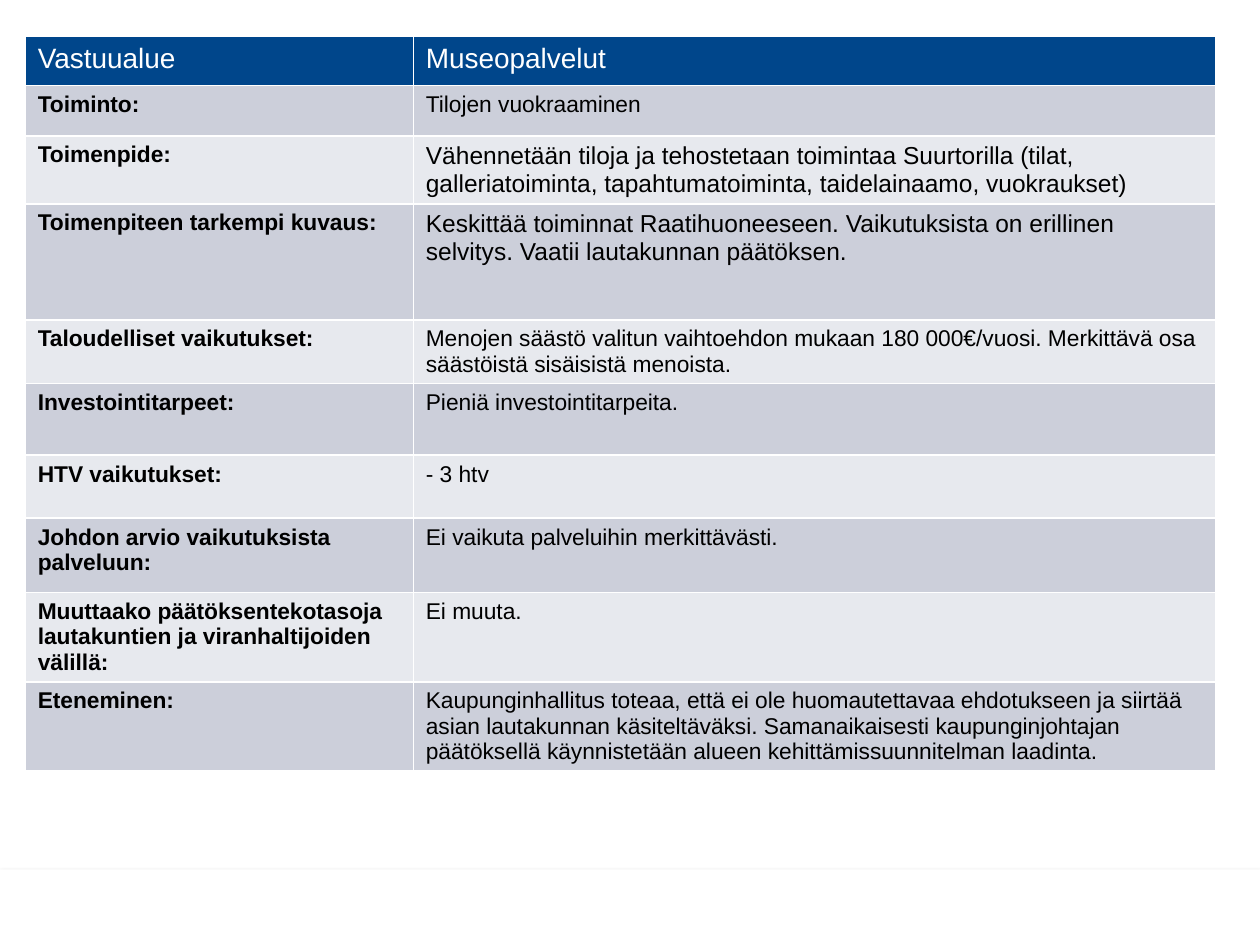
"""Build a slide with a table that sums up a proposed museum service measure."""
from lxml import etree
from pptx import Presentation
from pptx.dml.color import RGBColor
from pptx.enum.shapes import MSO_SHAPE
from pptx.oxml import parse_xml
from pptx.util import Inches, Pt

RECT = MSO_SHAPE.RECTANGLE
NS = "http://schemas.openxmlformats.org/drawingml/2006/main"
NAVY, DARK, LIGHT, WHITE, BLACK = "00468B", "CCCFDA", "E7E9EE", "FFFFFF", "000000"
COLS = [3.08, 6.37]
ROWS = [
    (0.39, "Vastuualue", "Museopalvelut", 16),
    (0.40, "Toiminto:", "Tilojen vuokraaminen", 13),
    (0.54, "Toimenpide:",
     "Vähennetään tiloja ja tehostetaan toimintaa Suurtorilla (tilat, galleriatoiminta, "
     "tapahtumatoiminta, taidelainaamo, vuokraukset)", 14),
    (0.92, "Toimenpiteen tarkempi kuvaus:",
     "Keskittää toiminnat Raatihuoneeseen. Vaikutuksista on erillinen selvitys. "
     "Vaatii lautakunnan päätöksen.", 14),
    (0.50, "Taloudelliset vaikutukset:",
     "Menojen säästö valitun vaihtoehdon mukaan 180 000€/vuosi. "
     "Merkittävä osa säästöistä sisäisistä menoista.", 13),
    (0.57, "Investointitarpeet:", "Pieniä investointitarpeita.", 13),
    (0.50, "HTV vaikutukset:", "- 3 htv", 13),
    (0.59, "Johdon arvio vaikutuksista palveluun:",
     "Ei vaikuta palveluihin merkittävästi.", 13),
    (0.71, "Muuttaako päätöksentekotasoja lautakuntien ja viranhaltijoiden välillä:",
     "Ei muuta.", 13),
    (0.70, "Eteneminen:",
     "Kaupunginhallitus toteaa, että ei ole huomautettavaa ehdotukseen ja siirtää asian "
     "lautakunnan käsiteltäväksi. Samanaikaisesti kaupunginjohtajan päätöksellä "
     "käynnistetään alueen kehittämissuunnitelman laadinta.", 13),
]


def rgb(value):
    return RGBColor.from_string(value)


def add_borders(cell):
    tcPr = cell._tc.get_or_add_tcPr()
    for i, side in enumerate(("lnL", "lnR", "lnT", "lnB")):
        ln = etree.Element(f"{{{NS}}}{side}", w=str(Pt(1)))
        fill = etree.SubElement(ln, f"{{{NS}}}solidFill")
        etree.SubElement(fill, f"{{{NS}}}srgbClr", val=WHITE)
        tcPr.insert(i, ln)


prs = Presentation()
prs.slide_width, prs.slide_height = Inches(10), Inches(7.5)
s = prs.slides.add_slide(prs.slide_layouts[6])

footer_h = int(prs.slide_height * 0.08)
sp = s.shapes.add_shape(RECT, 0, prs.slide_height - footer_h, prs.slide_width, footer_h)
sp.fill.solid()
sp.fill.fore_color.rgb = rgb(WHITE)
sp.line.fill.background()
sp._element.spPr.append(parse_xml(
    f'<a:effectLst xmlns:a="{NS}"><a:outerShdw blurRad="{Pt(3.1)}" dist="{Pt(1.8)}" '
    f'dir="5400000" rotWithShape="0"><a:srgbClr val="{BLACK}"><a:alpha val="35000"/>'
    '</a:srgbClr></a:outerShdw></a:effectLst>'))

table = s.shapes.add_table(
    len(ROWS), len(COLS), Inches(0.2), Inches(0.29),
    Inches(sum(COLS)), Inches(sum(row[0] for row in ROWS))).table
for column, width in zip(table.columns, COLS):
    column.width = Inches(width)

for i, (height, label, detail, size) in enumerate(ROWS):
    header = i == 0
    table.rows[i].height = Inches(height)
    for j, text in enumerate((label, detail)):
        cell = table.cell(i, j)
        cell.fill.solid()
        cell.fill.fore_color.rgb = rgb(NAVY if header else DARK if i % 2 else LIGHT)
        add_borders(cell)
        p = cell.text_frame.paragraphs[0]
        p.text = text
        font = p.runs[0].font
        font.name = "Arial"
        font.size = Pt(size if header or j else 13)
        font.bold = not header and j == 0
        font.color.rgb = rgb(WHITE if header else BLACK)

prs.save("out.pptx")
